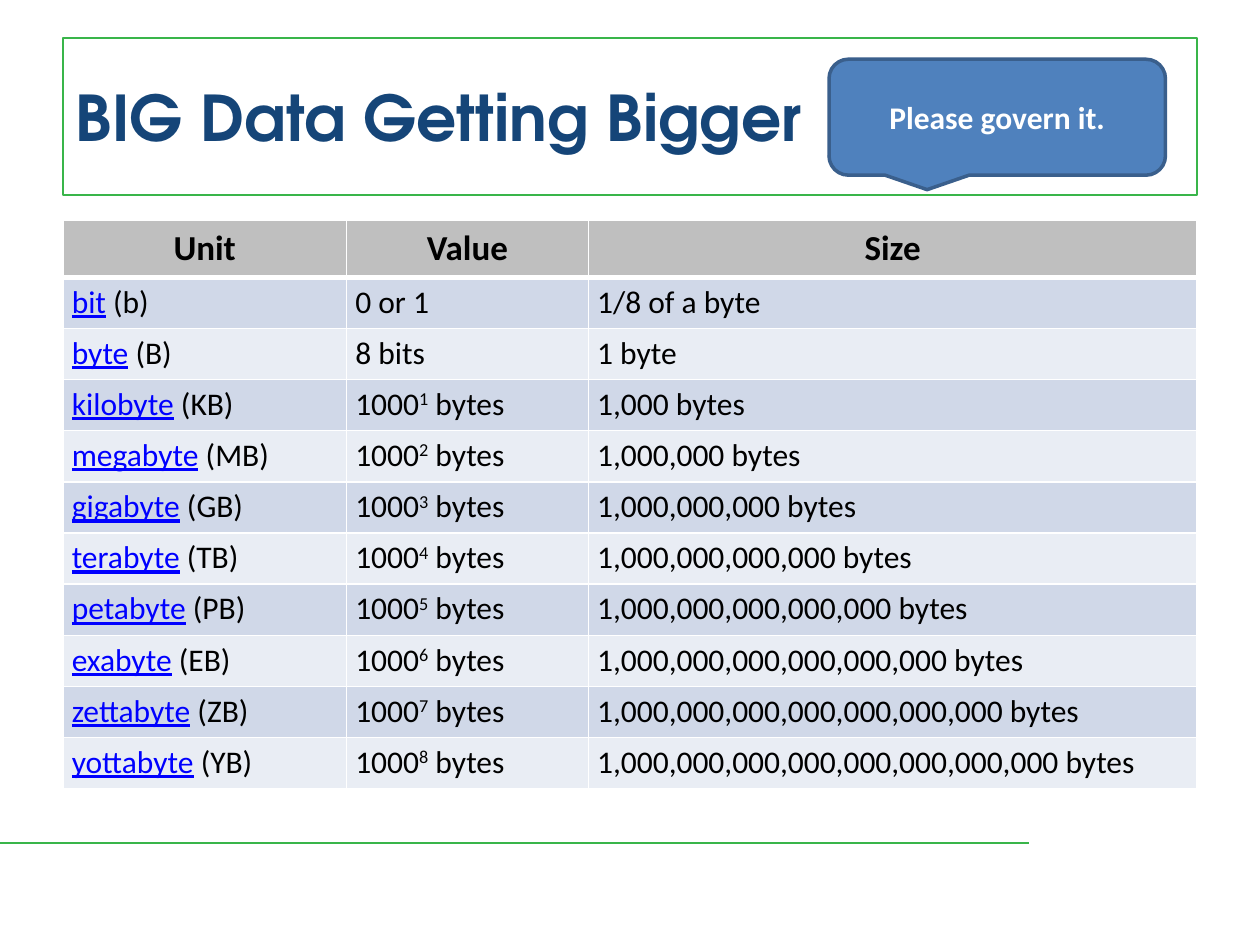
from pptx import Presentation
from pptx.dml.color import RGBColor
from pptx.enum.shapes import MSO_CONNECTOR, MSO_SHAPE
from pptx.enum.text import MSO_ANCHOR, PP_ALIGN
from pptx.oxml.ns import qn
from pptx.util import Inches, Pt
from lxml.etree import SubElement

THEME = {
    "title_font": "TeX Gyre Adventor", "body_font": "Calibri",
    "title_size": 36, "head_size": 20, "body_size": 18,
    "title": "154578", "green": "39B54A", "callout": "4F81BD",
    "callout_line": "3A5F8C", "head_fill": "BFBFBF",
    "bands": ("D0D8E8", "E9EDF4"),
    "link": "0000FF", "text": "000000", "white": "FFFFFF",
}

# Content
TITLE = "BIG Data Getting Bigger"
CALLOUT = "Please govern it."
HEADERS = ("Unit", "Value", "Size")
BASE_UNITS = [("bit", "b", ["0 or 1"], "1/8 of a byte"),
              ("byte", "B", ["8 bits"], "1 byte")]
PREFIXES = ("kilo", "mega", "giga", "tera", "peta", "exa", "zetta", "yotta")
UNITS = BASE_UNITS + [
    (prefix + "byte", prefix[0].upper() + "B",
     ["1000", str(power), " bytes"], f"{1000 ** power:,} bytes")
    for power, prefix in enumerate(PREFIXES, 1)]

# Layout in inches
COL_WIDTHS = (2.25, 1.92, 4.83)
TABLE_TOP, TABLE_HEIGHT, HEAD_HEIGHT = 1.75, 4.49, 0.43
ROW_HEIGHT = (TABLE_HEIGHT - HEAD_HEIGHT) / len(UNITS)


def color(name):
    return RGBColor.from_string(THEME.get(name, name))


def style(r, size, name="text", bold=False, font="body_font"):
    r.font.name = THEME[font]
    r.font.size = Pt(THEME[size])
    r.font.bold = bold
    r.font.color.rgb = color(name)


def outline(sp, name, width):
    sp.line.color.rgb = color(name)
    sp.line.width = Pt(width)


def add_border(cell, bottom):
    tc_pr = cell._tc.get_or_add_tcPr()
    widths = {"a:lnL": 1, "a:lnR": 1, "a:lnT": 1, "a:lnB": bottom}
    for i, (tag, width) in enumerate(widths.items()):
        ln = SubElement(tc_pr, qn(tag), w=str(Pt(width)))
        fill = SubElement(ln, qn("a:solidFill"))
        SubElement(fill, qn("a:srgbClr"), val=THEME["white"])
        tc_pr.insert(i, ln)


def fill_cell(cell, parts, fill, header=False):
    cell.fill.solid()
    cell.fill.fore_color.rgb = color(fill)
    add_border(cell, 3 if header else 1)
    cell.vertical_anchor = MSO_ANCHOR.MIDDLE
    cell.margin_left = cell.margin_right = Inches(0.07)
    cell.margin_top = Inches(0.05 if header else 0.01)
    cell.margin_bottom = Inches(0.06 if header else 0.02)
    p = cell.text_frame.paragraphs[0]
    p.alignment = PP_ALIGN.CENTER if header else PP_ALIGN.LEFT
    for part in parts:
        r = p.add_run()
        r.text = part
        style(r, "head_size" if header else "body_size", bold=header)
    return p.runs


prs = Presentation()
prs.slide_width, prs.slide_height = Inches(10), Inches(7.5)
s = prs.slides.add_slide(prs.slide_layouts[5])

# Title
title = s.shapes.title
title.left, title.top = Inches(0.5), Inches(0.3)
title.width, title.height = Inches(9), Inches(1.25)
outline(title, "green", 1)
tf = title.text_frame
tf.text = TITLE
tf.vertical_anchor = MSO_ANCHOR.MIDDLE
p = tf.paragraphs[0]
p.alignment = PP_ALIGN.LEFT
style(p.runs[0], "title_size", "title", True, "title_font")

# Footer rule
rule = s.shapes.add_connector(MSO_CONNECTOR.STRAIGHT, Inches(0), Inches(6.69),
                              Inches(8.17), Inches(6.69))
outline(rule, "green", 1.5)
SubElement(rule._element.spPr, qn("a:effectLst"))

# Callout
sp = s.shapes.add_shape(MSO_SHAPE.ROUNDED_RECTANGULAR_CALLOUT, Inches(6.58),
                        Inches(0.47), Inches(2.67), Inches(0.92))
sp.shadow.inherit = False
sp.fill.solid()
sp.fill.fore_color.rgb = color("callout")
outline(sp, "callout_line", 2)
tf = sp.text_frame
tf.text = CALLOUT
tf.word_wrap = True
tf.vertical_anchor = MSO_ANCHOR.MIDDLE
p = tf.paragraphs[0]
p.alignment = PP_ALIGN.CENTER
style(p.runs[0], "body_size", "white", True)

# Table of units
table = s.shapes.add_table(len(UNITS) + 1, len(HEADERS), Inches(0.5),
                           Inches(TABLE_TOP), Inches(sum(COL_WIDTHS)),
                           Inches(TABLE_HEIGHT)).table
for column, width in zip(table.columns, COL_WIDTHS):
    column.width = Inches(width)
for i, row in enumerate(table.rows):
    row.height = Inches(ROW_HEIGHT if i else HEAD_HEIGHT)
for j, header in enumerate(HEADERS):
    fill_cell(table.cell(0, j), [header], "head_fill", header=True)
for i, (unit, symbol, value, size) in enumerate(UNITS, 1):
    band = THEME["bands"][(i - 1) % 2]
    unit_run = fill_cell(table.cell(i, 0), [unit, f" ({symbol})"], band)[0]
    unit_run.font.underline = True
    unit_run.font.color.rgb = color("link")
    value_runs = fill_cell(table.cell(i, 1), value, band)
    if len(value_runs) > 1:
        value_runs[1].font._element.set("baseline", "30000")
    fill_cell(table.cell(i, 2), [size], band)

prs.save("out.pptx")
